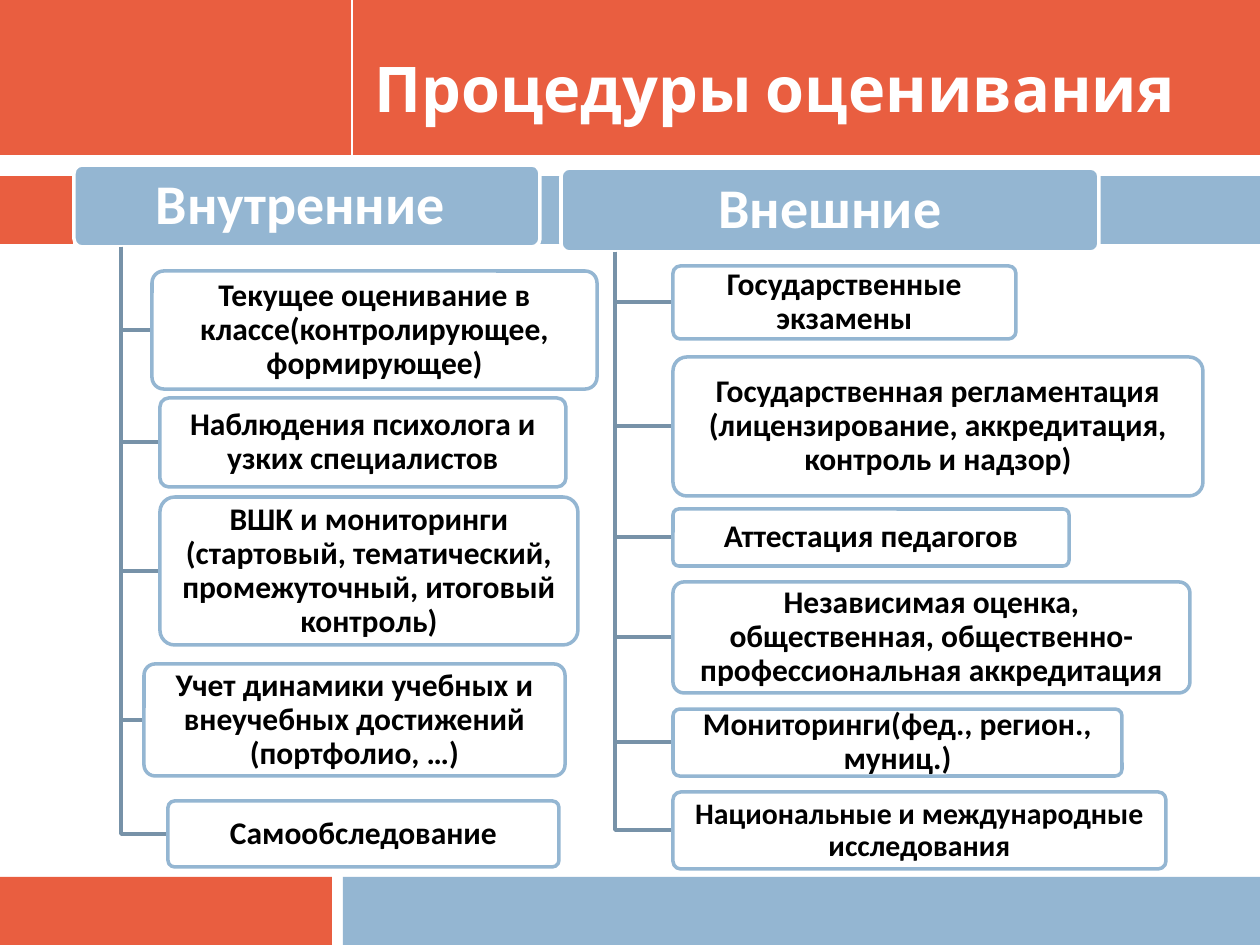
from dataclasses import dataclass

from lxml.etree import SubElement
from pptx import Presentation
from pptx.dml.color import RGBColor
from pptx.enum.shapes import MSO_CONNECTOR, MSO_SHAPE
from pptx.enum.text import MSO_ANCHOR, MSO_AUTO_SIZE, PP_ALIGN
from pptx.oxml.ns import qn
from pptx.util import Pt

PX = 914400 / 126
RED, BLUE, STEEL = "E95E40", "94B6D2", "7792A8"
WHITE, BLACK = "FFFFFF", "000000"


@dataclass
class Box:
    text: str
    left: int
    top: int
    width: int
    height: int
    size: int = 18


@dataclass
class Branch:
    head: Box
    trunk: int
    leaves: list[Box]


BANDS = [
    (0, 877, 332, 68, RED),
    (343, 877, 917, 68, BLUE),
    (0, 0, 1260, 155, RED),
    (0, 170, 1260, 44, WHITE),
    (0, 176, 73, 68, RED),
    (82, 176, 1178, 68, BLUE),
]

INNER = Branch(Box("Внутренние ", 74, 165, 466, 82, 32), 121, [
    Box("Текущее оценивание в классе(контролирующее, формирующее)", 152, 271, 445, 118),
    Box("Наблюдения психолога и узких специалистов", 160, 398, 406, 89),
    Box("ВШК и мониторинги (стартовый, тематический, промежуточный, итоговый контроль)",
        160, 497, 418, 148),
    Box("Учет динамики учебных и внеучебных достижений (портфолио, …)", 144, 664, 421, 112),
    Box("Самообследование", 168, 801, 391, 66),
])

OUTER = Branch(Box("Внешние", 561, 168, 538, 84, 32), 615, [
    Box("Государственные экзамены", 673, 266, 343, 73),
    Box("Государственная регламентация (лицензирование, аккредитация, контроль и надзор)",
        673, 357, 530, 139),
    Box("Аттестация педагогов", 673, 509, 396, 57),
    Box("Независимая оценка, общественная, общественно-профессиональная аккредитация",
        673, 582, 517, 111),
    Box("Мониторинги(фед., регион., муниц.)", 673, 709, 449, 67),
    Box("Национальные и международные исследования", 673, 792, 493, 77, 17),
])


def emu(px: int) -> int:
    return round(px * PX)


def hue(code: str) -> RGBColor:
    return RGBColor.from_string(code)


def apply(target, values: dict) -> None:
    for name, value in values.items():
        setattr(target, name, value)


def stroke(line, code: str, width: float) -> None:
    line.color.rgb = hue(code)
    line.width = Pt(width)


def add_form(slide, kind, left: int, top: int, width: int, height: int, fill: str):
    form = slide.shapes.add_shape(kind, emu(left), emu(top), emu(width), emu(height))
    form.shadow.inherit = False
    form.fill.solid()
    form.fill.fore_color.rgb = hue(fill)
    return form


def add_bands(slide) -> None:
    for band in BANDS:
        add_form(slide, MSO_SHAPE.RECTANGLE, *band).line.fill.background()
    rule = slide.shapes.add_connector(MSO_CONNECTOR.STRAIGHT, emu(352), 0, emu(352), emu(155))
    stroke(rule.line, WHITE, 1.5)
    SubElement(rule.element.spPr, qn("a:effectLst"))


def write(frame, text: str, font: dict, code: str, para: dict) -> None:
    frame.text = text
    first = frame.paragraphs[0]
    apply(first, para)
    apply(first.runs[0].font, font)
    first.runs[0].font.color.rgb = hue(code)


def set_title(slide) -> None:
    title = slide.shapes.title
    apply(title, {"left": emu(362), "top": emu(16), "width": emu(873), "height": emu(149)})
    frame = title.text_frame
    apply(frame, {"auto_size": MSO_AUTO_SIZE.NONE, "word_wrap": True,
                  "vertical_anchor": MSO_ANCHOR.MIDDLE})
    write(frame, "Процедуры оценивания", {"name": "Cabin", "size": Pt(36), "bold": True},
          WHITE, {"alignment": PP_ALIGN.LEFT, "line_spacing": Pt(40)})
    # The title has to lie above the bands.
    title.element.getparent().append(title.element)


def add_box(slide, box: Box, fill: str, edge: str, ink: str, pad: tuple[int, int]):
    form = add_form(slide, MSO_SHAPE.ROUNDED_RECTANGLE,
                    box.left, box.top, box.width, box.height, fill)
    form.adjustments[0] = 0.1
    stroke(form.line, edge, 2)
    side, end = map(emu, pad)
    frame = form.text_frame
    apply(frame, {"word_wrap": True, "vertical_anchor": MSO_ANCHOR.MIDDLE,
                  "margin_left": side, "margin_right": side,
                  "margin_top": end, "margin_bottom": end})
    write(frame, box.text, {"name": "Calibri", "size": Pt(box.size), "bold": True},
          ink, {"alignment": PP_ALIGN.CENTER, "line_spacing": 0.9})
    return form


def add_elbow(slide, trunk: int, start: int, leaf: Box) -> None:
    """Run a line down the trunk and across to the middle of the leaf's left side."""
    mid = leaf.top + leaf.height // 2
    path = slide.shapes.build_freeform(trunk, start, scale=PX)
    path.add_line_segments([(trunk, mid), (leaf.left, mid)], close=False)
    elbow = path.convert_to_shape()
    elbow.shadow.inherit = False
    elbow.fill.background()
    stroke(elbow.line, STEEL, 2)


def add_branch(slide, branch: Branch) -> None:
    head = branch.head
    add_box(slide, head, BLUE, WHITE, WHITE, (9, 5))
    for leaf in branch.leaves:
        add_elbow(slide, branch.trunk, head.top + head.height, leaf)
        form = add_box(slide, leaf, WHITE, BLUE, BLACK, (5, 3))
        tint = form.element.spPr.find(qn("a:solidFill"))[0]
        SubElement(tint, qn("a:alpha"), val="90000")


def main() -> None:
    deck = Presentation()
    apply(deck, {"slide_width": emu(1260), "slide_height": emu(945)})
    slide = deck.slides.add_slide(deck.slide_layouts[5])
    add_bands(slide)
    set_title(slide)
    for branch in (INNER, OUTER):
        add_branch(slide, branch)
    deck.save("out.pptx")


if __name__ == "__main__":
    main()
